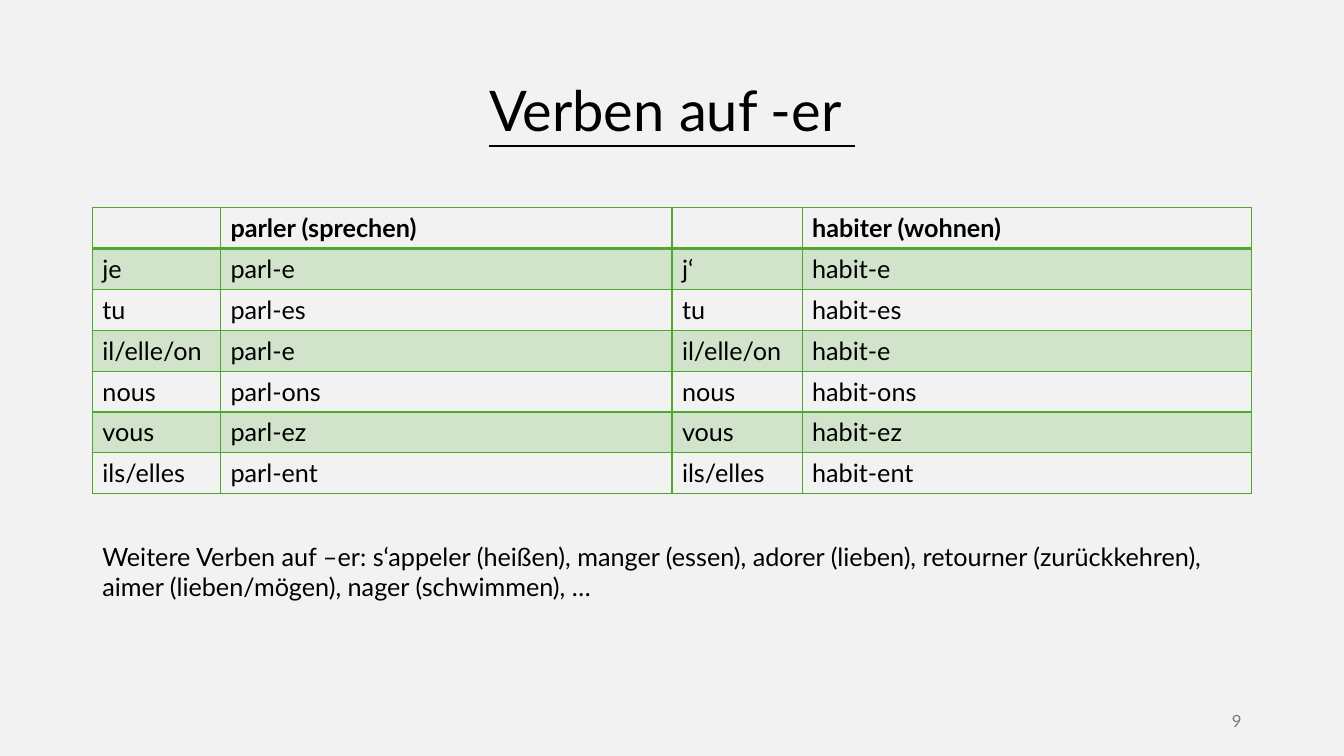
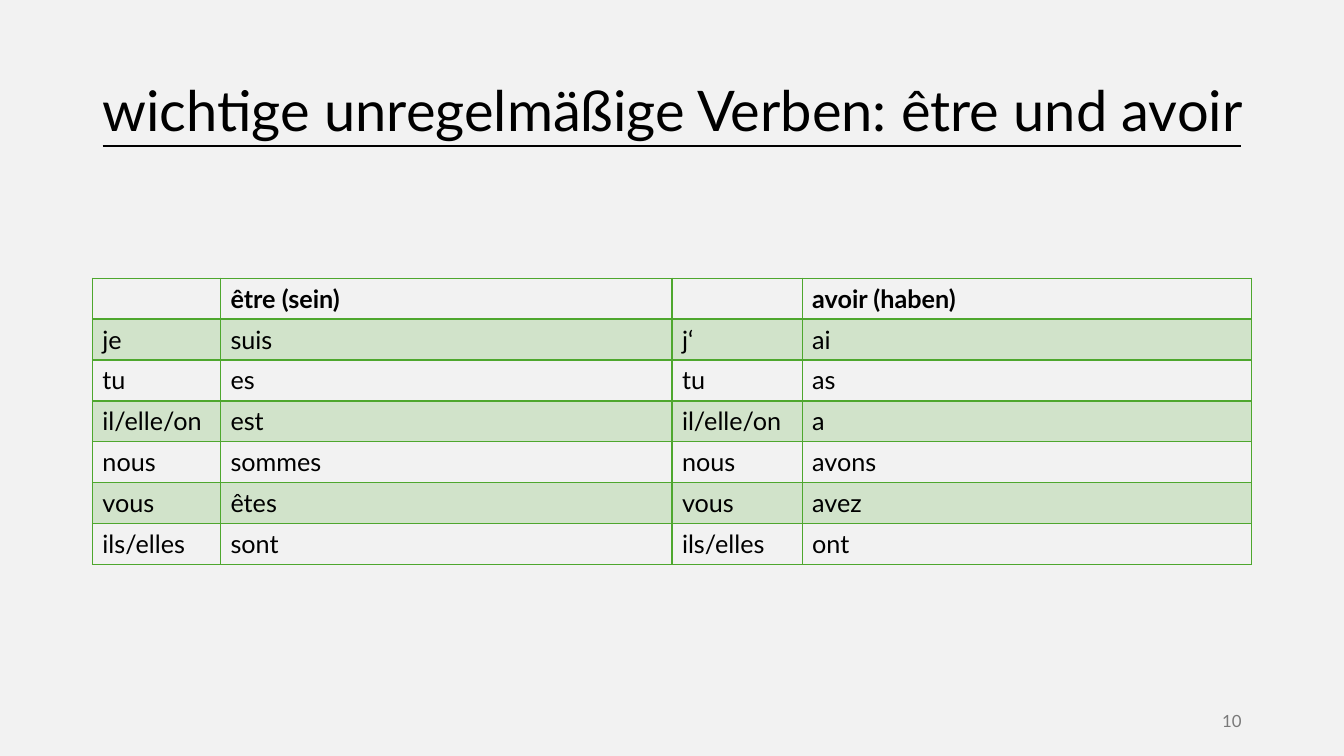
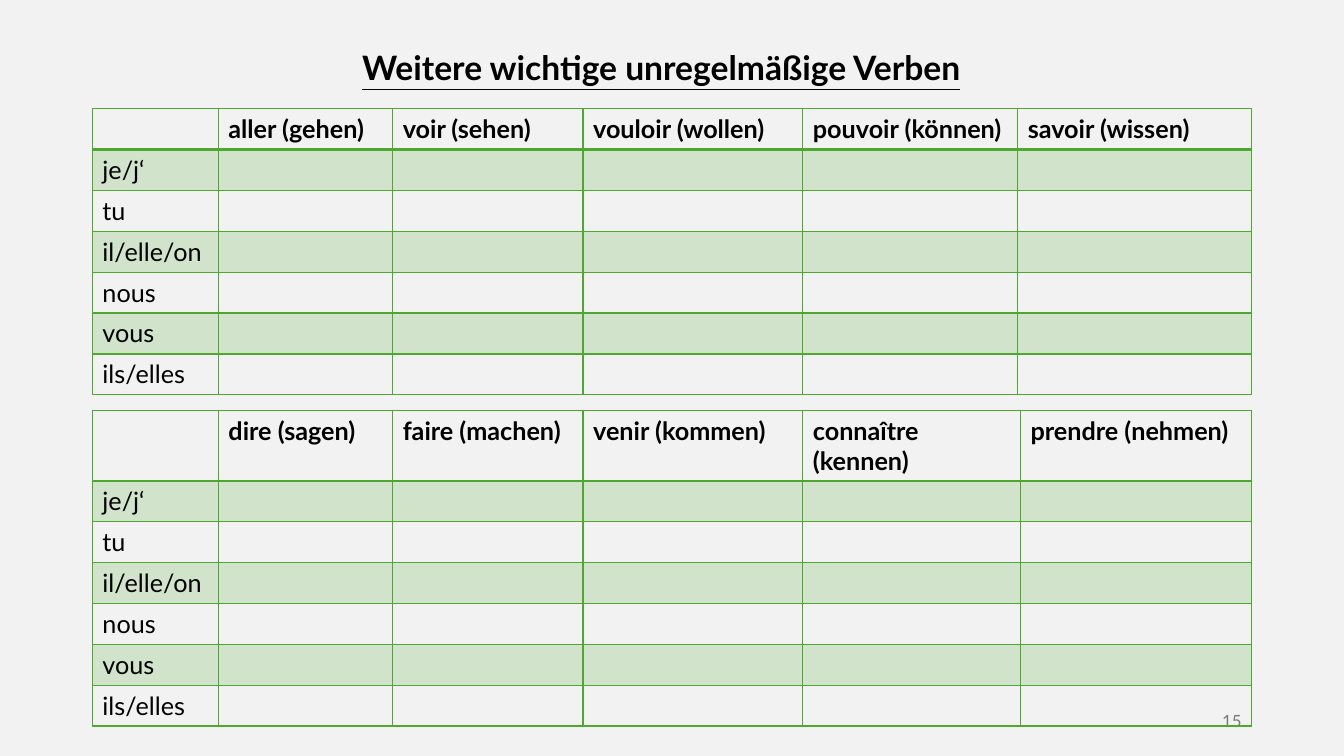
import pptx
import pptx.dml.color
import pptx.enum.text
import pptx.oxml
import pptx.oxml.ns
import pptx.util
from lxml import etree

Pt = pptx.util.Pt
ALIGN = pptx.enum.text.PP_ALIGN
ANCHOR = pptx.enum.text.MSO_ANCHOR
COLORS = {"background": "F2F2F2", "text": "000000", "number": "797979", "green": "4EA72E"}
FONT = "Lato"
LEFT, WIDTH, ROW_HEIGHT = 66, 828, 29.2
PERSONS = ["je", "tu", "il/elle/on", "nous", "vous", "ils/elles"]
PERSONS_ELIDED = ["j‘"] + PERSONS[1:]
PERSONS_BOTH = ["je/j‘"] + PERSONS[1:]
PAIR_COLUMNS = [91.5, 322.5, 93, 321]


def rgb(name):
    return pptx.dml.color.RGBColor.from_string(COLORS[name])


def write_text(frame, text, size=18, color="text", bold=False, underline=False,
               align=ALIGN.LEFT, anchor=ANCHOR.TOP, spacing=None):
    frame.word_wrap = True
    frame.auto_size = pptx.enum.text.MSO_AUTO_SIZE.NONE
    frame.vertical_anchor = anchor
    for index, line in enumerate(text.split("\n")):
        paragraph = frame.add_paragraph() if index else frame.paragraphs[0]
        paragraph.alignment = align
        paragraph.line_spacing = spacing
        run = paragraph.add_run()
        run.text = line
        run.font.name = FONT
        run.font.size = Pt(size)
        run.font.bold = bold
        run.font.underline = underline
        run.font.color.rgb = rgb(color)


def set_border(cell, side, width):
    properties = cell._tc.get_or_add_tcPr()
    line = etree.SubElement(properties, pptx.oxml.ns.qn(f"a:ln{side}"), w=str(Pt(width)))
    fill = etree.SubElement(line, pptx.oxml.ns.qn("a:solidFill"))
    etree.SubElement(fill, pptx.oxml.ns.qn("a:srgbClr"), val=COLORS["green"])


def set_band(cell):
    cell.fill.solid()
    cell.fill.fore_color.rgb = rgb("green")
    color = cell._tc.tcPr.find(pptx.oxml.ns.qn("a:solidFill"))[0]
    etree.SubElement(color, pptx.oxml.ns.qn("a:alpha"), val="20000")


class Deck:
    def __init__(self):
        self.presentation = pptx.Presentation()
        self.presentation.slide_width = Pt(960)
        self.presentation.slide_height = Pt(540)
        background = self.presentation.slide_master.background.fill
        background.solid()
        background.fore_color.rgb = rgb("background")
        self.slide = None

    def add_slide(self, title, number, left=LEFT, top=29, height=104, **text_format):
        self.slide = self.presentation.slides.add_slide(self.presentation.slide_layouts[5])
        shape = self.slide.shapes.title
        shape.left, shape.top, shape.width, shape.height = Pt(left), Pt(top), Pt(WIDTH), Pt(height)
        title_format = {"size": 40, "anchor": ANCHOR.MIDDLE, "spacing": 0.9} | text_format
        write_text(shape.text_frame, title, underline=True, align=ALIGN.CENTER, **title_format)
        self.add_text(str(number), 678, 500.4, 216, 28.8, size=12, color="number",
                      align=ALIGN.RIGHT, anchor=ANCHOR.MIDDLE)

    def add_text(self, text, left, top, width, height, **text_format):
        shape = self.slide.shapes.add_textbox(Pt(left), Pt(top), Pt(width), Pt(height))
        write_text(shape.text_frame, text, **text_format)

    def add_table(self, top, widths, headers, columns):
        rows = [headers, *zip(*columns)]
        table = self.slide.shapes.add_table(
            len(rows), len(widths), Pt(LEFT), Pt(top), Pt(WIDTH), Pt(ROW_HEIGHT * len(rows))).table
        table.first_row = table.horz_banding = False
        for column, width in zip(table.columns, widths):
            column.width = Pt(width)
        for row_index, row in enumerate(rows):
            table.rows[row_index].height = Pt(ROW_HEIGHT)
            for column_index, text in enumerate(row):
                cell = table.cell(row_index, column_index)
                for side in "LRTB":
                    set_border(cell, side, 2 if side == "B" and row_index == 0 else 1)
                if row_index % 2:
                    set_band(cell)
                else:
                    cell.fill.background()
                if text:
                    write_text(cell.text_frame, text, bold=row_index == 0)

    def add_verb_pair(self, top, first, first_forms, second, second_forms):
        self.add_table(top, PAIR_COLUMNS, ["", first, "", second],
                       [PERSONS, first_forms, PERSONS_ELIDED, second_forms])

    def add_blank_verbs(self, top, widths, verbs):
        self.add_table(top, widths, ["", *verbs], [PERSONS_BOTH] + [[""] * 6] * len(verbs))


def main():
    deck = Deck()

    deck.add_slide("Verben auf -er ", 9)
    endings = ["e", "es", "e", "ons", "ez", "ent"]
    deck.add_verb_pair(148.3, "parler (sprechen)", [f"parl-{ending}" for ending in endings],
                       "habiter (wohnen)", [f"habit-{ending}" for ending in endings])
    deck.add_text("Weitere Verben auf –er: s‘appeler (heißen), manger (essen), adorer (lieben), "
                  "retourner (zurückkehren),\naimer (lieben/mögen), nager (schwimmen), …",
                  LEFT, 383, WIDTH, 51)

    deck.add_slide("wichtige unregelmäßige Verben: être und avoir ", 10)
    deck.add_verb_pair(198.8, "être (sein)", ["suis", "es", "est", "sommes", "êtes", "sont"],
                       "avoir (haben)", ["ai", "as", "a", "avons", "avez", "ont"])

    deck.add_slide("Weitere wichtige unregelmäßige Verben", 15, left=58.3, top=30.2, height=36,
                   size=24, bold=True, anchor=ANCHOR.TOP, spacing=1.0)
    deck.add_blank_verbs(77.6, [90, 124.5, 136, 157, 153.5, 167],
                         ["aller (gehen)", "voir (sehen)", "vouloir (wollen)",
                          "pouvoir (können)", "savoir (wissen)"])
    deck.add_blank_verbs(293, [90, 124.5, 136, 157, 155.5, 165],
                         ["dire (sagen)", "faire (machen)", "venir (kommen)",
                          "connaître (kennen)", "prendre (nehmen)"])

    deck.presentation.save("out.pptx")


if __name__ == "__main__":
    main()
